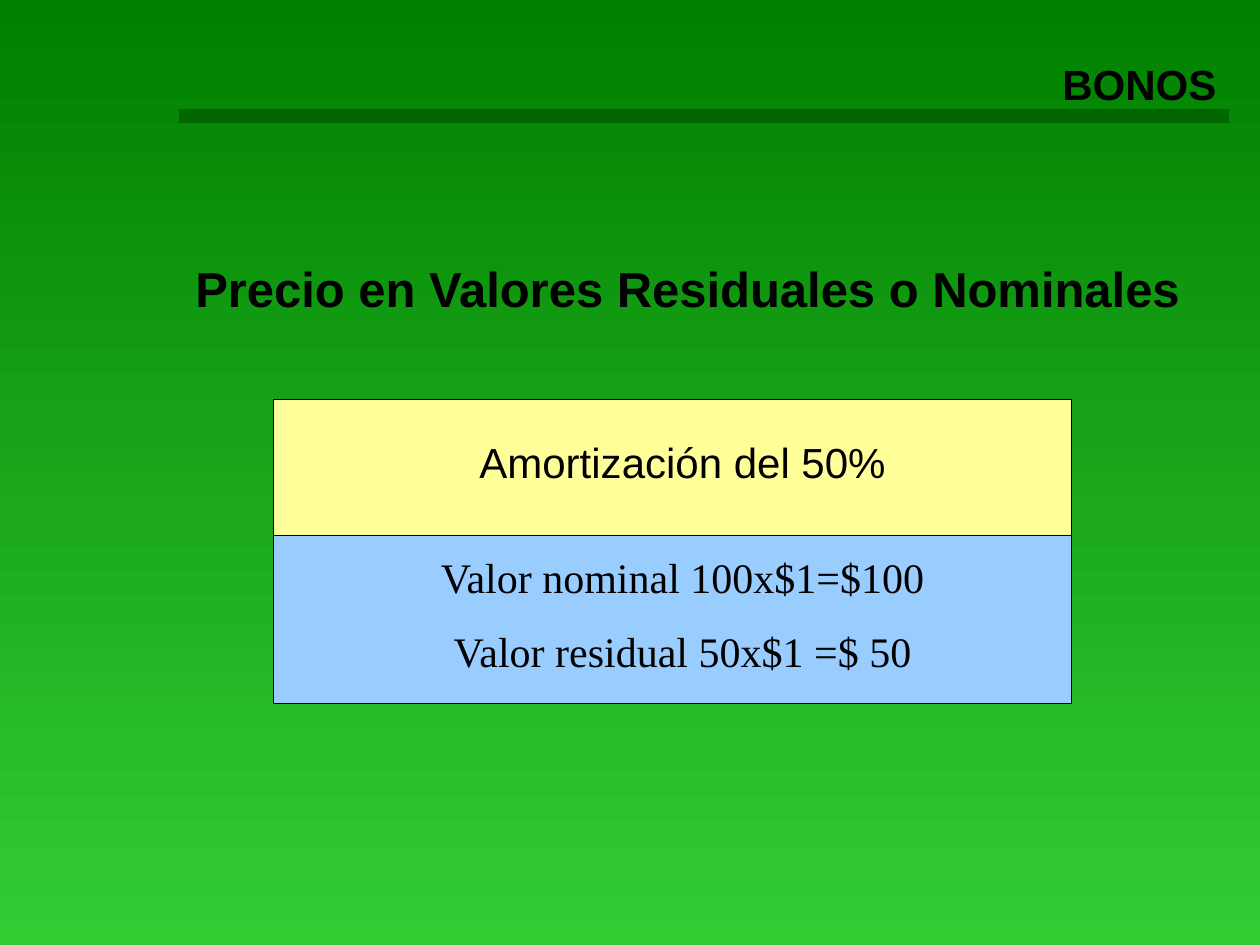
from dataclasses import dataclass

import pptx
import pptx.dml.color
import pptx.enum.shapes
import pptx.enum.text
import pptx.oxml
import pptx.oxml.ns
import pptx.util

Cm = pptx.util.Cm
Pt = pptx.util.Pt
RGBColor = pptx.dml.color.RGBColor
Align = pptx.enum.text.PP_ALIGN

DARK_GREEN = RGBColor(0x00, 0x80, 0x00)
LIGHT_GREEN = RGBColor(0x33, 0xCC, 0x33)
RULE_GREEN = RGBColor(0x00, 0x66, 0x00)
YELLOW = RGBColor(0xFF, 0xFF, 0x99)
BLUE = RGBColor(0x99, 0xCC, 0xFF)
BLACK = RGBColor(0x00, 0x00, 0x00)

PANEL_LEFT, PANEL_WIDTH = 5.51, 16.09
PANEL_TOP, HEADER_HEIGHT, VALUES_HEIGHT = 8.05, 2.75, 3.38


@dataclass(frozen=True)
class Box:
    left: float
    top: float
    width: float
    height: float

    def lengths(self) -> tuple:
        return Cm(self.left), Cm(self.top), Cm(self.width), Cm(self.height)


@dataclass(frozen=True)
class Panel:
    box: Box
    color: RGBColor


@dataclass(frozen=True)
class Caption:
    box: Box
    lines: tuple[str, ...]
    size: int = 24
    font: str = "Arial"
    bold: bool = False
    align: Align = Align.CENTER


PANELS = (
    Panel(Box(PANEL_LEFT, PANEL_TOP, PANEL_WIDTH, HEADER_HEIGHT), YELLOW),
    Panel(Box(PANEL_LEFT, PANEL_TOP + HEADER_HEIGHT, PANEL_WIDTH, VALUES_HEIGHT), BLUE),
)

CAPTIONS = (
    Caption(Box(0.64, 1.06, 24.13, 1.27), ("BONOS",), bold=True, align=Align.RIGHT),
    Caption(Box(2.96, 5.08, 21.8, 1.44), ("Precio en Valores Residuales o Nominales",),
            size=28, bold=True),
    Caption(Box(6.56, 8.68, 14.4, 1.27), ("Amortización del 50%",)),
    Caption(Box(6.56, 11, 14.4, 2.79),
            ("Valor nominal 100x$1=$100", "Valor residual 50x$1 =$ 50"),
            font="Times New Roman"),
)


def paint_background(slide) -> None:
    fill = slide.background.fill
    fill.gradient()
    fill.gradient_angle = 270
    for stop, color, position in zip(fill.gradient_stops, (DARK_GREEN, LIGHT_GREEN), (0, 1)):
        stop.color.rgb = color
        stop.position = position


def draw_rule(slide) -> None:
    rule = slide.shapes.add_connector(
        pptx.enum.shapes.MSO_CONNECTOR.STRAIGHT, Cm(3.6), Cm(2.33), Cm(24.77), Cm(2.33))
    rule.line.color.rgb = RULE_GREEN
    rule.line.width = Pt(8)
    properties = rule._element.spPr
    properties.append(pptx.oxml.parse_xml(
        f"<a:effectLst {pptx.oxml.ns.nsdecls('a')}/>"))


def draw_panel(slide, panel: Panel) -> None:
    rectangle = slide.shapes.add_shape(
        pptx.enum.shapes.MSO_SHAPE.RECTANGLE, *panel.box.lengths())
    rectangle.shadow.inherit = False
    rectangle.fill.solid()
    rectangle.fill.fore_color.rgb = panel.color
    rectangle.line.color.rgb = BLACK
    rectangle.line.width = Pt(0.75)


def draw_caption(slide, caption: Caption) -> None:
    frame = slide.shapes.add_textbox(*caption.box.lengths()).text_frame
    frame.word_wrap = True
    frame.auto_size = pptx.enum.text.MSO_AUTO_SIZE.SHAPE_TO_FIT_TEXT
    for index, line in enumerate(caption.lines):
        paragraph = frame.add_paragraph() if index else frame.paragraphs[0]
        paragraph.text = line
        paragraph.alignment = caption.align
        paragraph.space_before = Pt(13 if index else 0)
        paragraph.font.name = caption.font
        paragraph.font.size = Pt(caption.size)
        paragraph.font.bold = caption.bold
        paragraph.font.color.rgb = BLACK


def main() -> None:
    presentation = pptx.Presentation()
    presentation.slide_width = Cm(25.4)
    presentation.slide_height = Cm(19.05)
    slide = presentation.slides.add_slide(presentation.slide_layouts[6])
    paint_background(slide)
    draw_rule(slide)
    for panel in PANELS:
        draw_panel(slide, panel)
    for caption in CAPTIONS:
        draw_caption(slide, caption)
    presentation.save("out.pptx")


if __name__ == "__main__":
    main()
